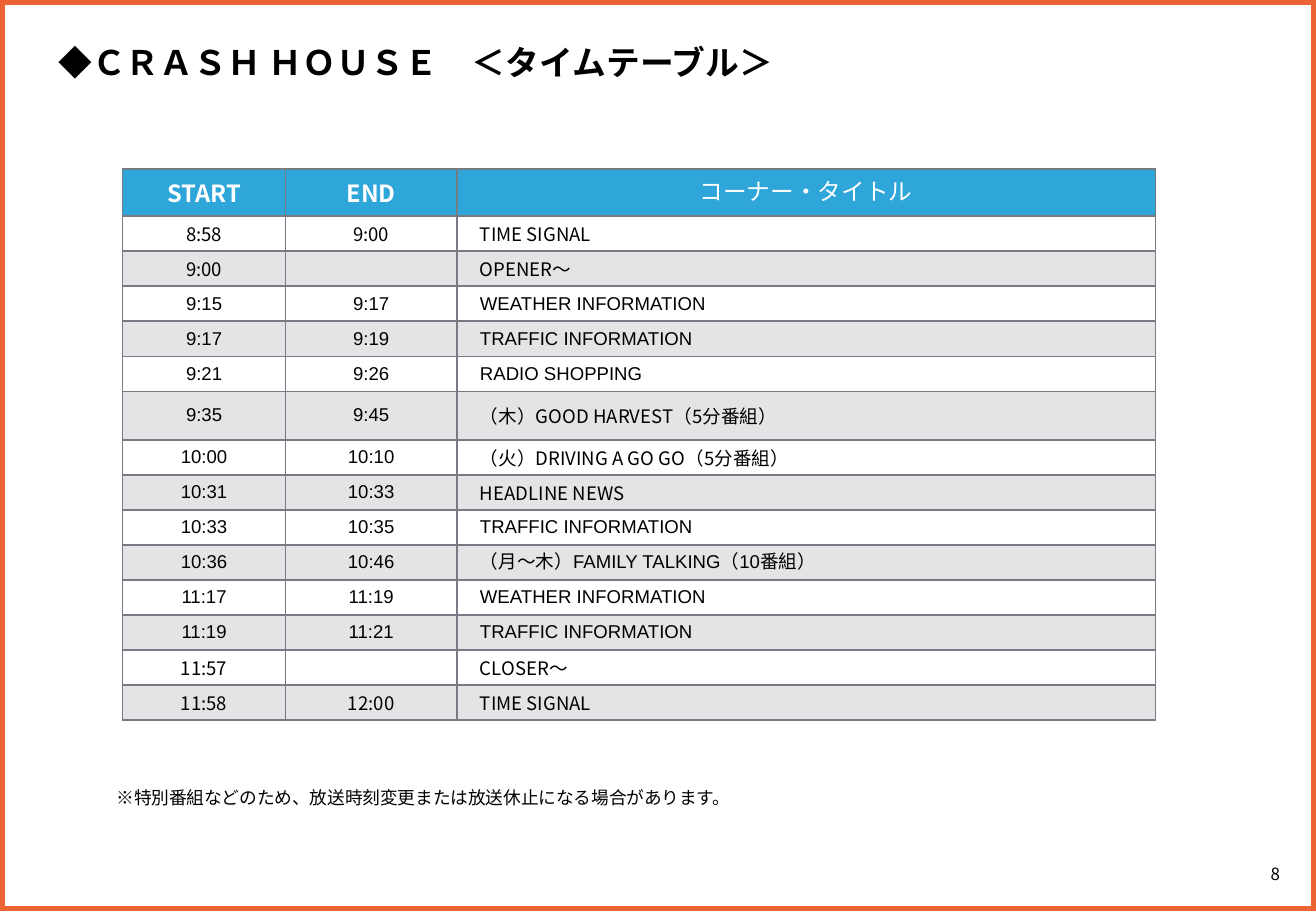
from lxml.etree import SubElement
from pptx import Presentation
from pptx.dml.color import RGBColor
from pptx.enum.shapes import MSO_SHAPE
from pptx.enum.text import MSO_ANCHOR as Anchor, MSO_AUTO_SIZE as AutoSize, PP_ALIGN as Align
from pptx.oxml import parse_xml
from pptx.oxml.ns import nsdecls, qn
from pptx.util import Inches, Pt

GOTHIC, ARIAL = "Noto Sans CJK JP", "Arial"
THEME = {
    "ink": "000000", "paper": "FFFFFF", "frame": "EB6432",
    "header": "2EA6DA", "rule": "797B84", "band_alpha": 20,
    "title_size": 20, "header_size": 14, "row_size": 11,
    "note_size": 10.5, "page_size": 10,
}

TITLE = [("◆", False), ("ＣＲＡＳＨ ＨＯＵＳＥ　＜タイムテーブル＞", True)]
NOTE = "※特別番組などのため、放送時刻変更または放送休止になる場合があります。"
PAGE = "8"
HEADER = [("START", GOTHIC, True), ("END", GOTHIC, True), ("コーナー・タイトル", ARIAL, False)]
# start, end, corner title, font of the times, font of the title
PROGRAMME = [
    ("8:58", "9:00", "TIME SIGNAL", GOTHIC, GOTHIC),
    ("9:00", "", "OPENER〜", GOTHIC, GOTHIC),
    ("9:15", "9:17", "WEATHER INFORMATION", ARIAL, ARIAL),
    ("9:17", "9:19", "TRAFFIC INFORMATION", ARIAL, ARIAL),
    ("9:21", "9:26", "RADIO SHOPPING", ARIAL, ARIAL),
    ("9:35", "9:45", "（木）GOOD HARVEST（5分番組）", ARIAL, GOTHIC),
    ("10:00", "10:10", "（火）DRIVING A GO GO（5分番組）", ARIAL, GOTHIC),
    ("10:31", "10:33", "HEADLINE NEWS", ARIAL, GOTHIC),
    ("10:33", "10:35", "TRAFFIC INFORMATION", ARIAL, ARIAL),
    ("10:36", "10:46", "（月〜木）FAMILY TALKING（10番組）", ARIAL, ARIAL),
    ("11:17", "11:19", "WEATHER INFORMATION", ARIAL, ARIAL),
    ("11:19", "11:21", "TRAFFIC INFORMATION", ARIAL, ARIAL),
    ("11:57", "", "CLOSER～", GOTHIC, GOTHIC),
    ("11:58", "12:00", "TIME SIGNAL", GOTHIC, GOTHIC),
]
COLUMN_WIDTHS = (1.34, 1.41, 5.75)
TABLE_BOX = (1.01, 1.39, 8.5, 4.54)
TALL_ROWS = {0: 0.39, 6: 0.4}
TITLE_INDENT = 0.19


def color(name):
    return RGBColor.from_string(THEME[name])


def set_all(target, values):
    for name, value in values.items():
        setattr(target, name, value)


def place(shape, box):
    set_all(shape, dict(zip(("left", "top", "width", "height"), map(Inches, box))))


def add_run(paragraph, text, size, font=GOTHIC, ink="ink", bold=False):
    run = paragraph.add_run()
    run.text = text
    set_all(run.font, {"name": font, "size": Pt(THEME[size]), "bold": bold})
    run.font.color.rgb = color(ink)
    SubElement(run.font._element, qn("a:ea"), typeface=font)


def add_label(slide, box, text, size, **frame_format):
    label = slide.shapes.add_textbox(*map(Inches, box)).text_frame
    set_all(label, {"word_wrap": True, **frame_format})
    add_run(label.paragraphs[0], text, size)
    return label


def rule_cell(cell):
    """Draw a 1 pt rule on all four sides."""
    for index, side in enumerate("LRTB"):
        cell._tc.get_or_add_tcPr().insert(index, parse_xml(
            f'<a:ln{side} {nsdecls("a")} w="{Pt(1)}"><a:solidFill>'
            f'<a:srgbClr val="{THEME["rule"]}"/></a:solidFill></a:ln{side}>'))


def fill_cell(cell, row):
    if row % 2 and row:
        cell.fill.background()
        return
    cell.fill.solid()
    cell.fill.fore_color.rgb = color("rule" if row else "header")
    if row:
        tint = cell._tc.tcPr.find(".//" + qn("a:srgbClr"))
        SubElement(tint, qn("a:alpha"), val=str(THEME["band_alpha"] * 1000))


def write_cell(cell, row, column, text, font, bold=False):
    set_all(cell, {"margin_left": 0, "margin_right": 0, "margin_top": 0,
                   "margin_bottom": 0, "vertical_anchor": Anchor.MIDDLE})
    fill_cell(cell, row)
    rule_cell(cell)
    paragraph = cell.text_frame.paragraphs[0]
    size = "row_size" if row else "header_size"
    if row and column == 2:
        paragraph.alignment = Align.LEFT
        paragraph._p.get_or_add_pPr().set("marL", str(Inches(TITLE_INDENT)))
    else:
        paragraph.alignment = Align.CENTER
    if text:
        add_run(paragraph, text, size, font, "ink" if row else "paper", bold)
    else:
        SubElement(paragraph._p, qn("a:endParaRPr"), sz=str(THEME[size] * 100))


def add_timetable(slide):
    rows = [HEADER] + [
        [(start, time_font), (end, time_font), (corner, title_font)]
        for start, end, corner, time_font, title_font in PROGRAMME]
    table = slide.shapes.add_table(len(rows), len(COLUMN_WIDTHS), *map(Inches, TABLE_BOX)).table
    for column, width in zip(table.columns, COLUMN_WIDTHS):
        column.width = Inches(width)
    plain_height = (TABLE_BOX[3] - sum(TALL_ROWS.values())) / (len(rows) - len(TALL_ROWS))
    for r, cells in enumerate(rows):
        table.rows[r].height = Inches(TALL_ROWS.get(r, plain_height))
        for c, content in enumerate(cells):
            write_cell(table.cell(r, c), r, c, *content)


def main():
    deck = Presentation()
    set_all(deck, {"slide_width": Inches(10.83), "slide_height": Inches(7.5)})
    slide = deck.slides.add_slide(deck.slide_layouts[5])

    frame = slide.shapes.add_shape(MSO_SHAPE.RECTANGLE, 0, 0, deck.slide_width, deck.slide_height)
    frame.shadow.inherit = False
    frame.fill.background()
    frame.line.color.rgb = color("frame")
    frame.line.width = Pt(6)

    title = slide.shapes.title
    place(title, (0.38, 0.29, 7.01, 0.44))
    set_all(title.text_frame, {"word_wrap": True, "auto_size": AutoSize.NONE,
                               "vertical_anchor": Anchor.MIDDLE})
    heading = title.text_frame.paragraphs[0]
    heading.alignment = Align.LEFT
    for text, bold in TITLE:
        add_run(heading, text, "title_size", bold=bold)

    add_timetable(slide)
    add_label(slide, (0.86, 6.43, 8.62, 0.28), NOTE, "note_size")
    page = add_label(slide, (10.16, 7.02, 0.67, 0.35), PAGE, "page_size",
                     vertical_anchor=Anchor.MIDDLE)
    page.paragraphs[0].alignment = Align.CENTER
    deck.save("out.pptx")


if __name__ == "__main__":
    main()
